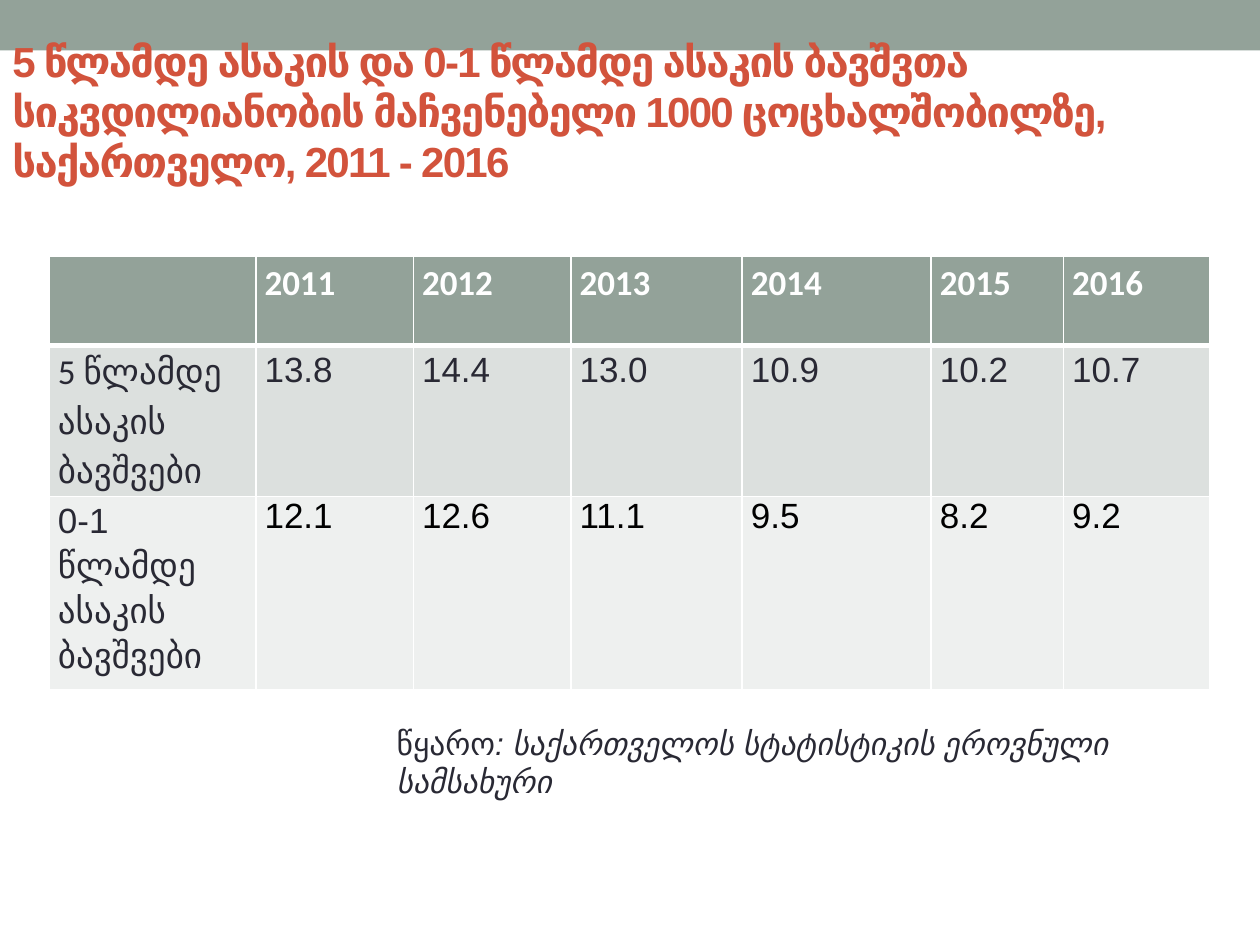
from lxml import etree
from pptx import Presentation
from pptx import util as u
from pptx.dml.color import RGBColor
from pptx.enum import shapes, text
from pptx.oxml.ns import qn

SAGE = RGBColor(0x93, 0xA2, 0x99)
BAND_DARK = RGBColor(0xDC, 0xE0, 0xDE)
BAND_LIGHT = RGBColor(0xEE, 0xF0, 0xEF)
RED = RGBColor(0xD2, 0x53, 0x3C)
INK = RGBColor(0x29, 0x29, 0x34)
BLACK = RGBColor(0, 0, 0)
WHITE = RGBColor(0xFF, 0xFF, 0xFF)

COLUMNS = [1.64, 1.25, 1.25, 1.36, 1.5, 1.05, 1.16]
ROWS = [0.71, 1.2, 1.43]  # tall enough for the wrapped labels
DATA = [
    ["", "2011", "2012", "2013", "2014", "2015", "2016"],
    ["5 წლამდე ასაკის ბავშვები", "13.8", "14.4", "13.0", "10.9", "10.2", "10.7"],
    ["0-1 წლამდე ასაკის ბავშვები", "12.1", "12.6", "11.1", "9.5", "8.2", "9.2"],
]


class Deck:
    """Holds the style and the current slide."""

    font = "Arial"
    table_font = "Calibri"

    def __init__(self, s):
        self.s = s

    def style(self, p, size, color, name=None, bold=False):
        f = p.font
        f.name, f.size, f.bold = name or self.font, u.Pt(size), bold
        f.color.rgb = color

    def bar(self, x, y, w, h, color):
        sp = self.s.shapes.add_shape(
            shapes.MSO_SHAPE.RECTANGLE, *map(u.Inches, (x, y, w, h)))
        sp.shadow.inherit = False
        sp.fill.solid()
        sp.fill.fore_color.rgb = color
        sp.line.fill.background()

    def text(self, x, y, w, h, runs, size, color, bold=False, spacing=None):
        """Each run is a (text, italic) pair."""
        sp = self.s.shapes.add_textbox(*map(u.Inches, (x, y, w, h)))
        tf = sp.text_frame
        tf.word_wrap = True
        tf.vertical_anchor = text.MSO_ANCHOR.TOP
        p = tf.paragraphs[0]
        self.style(p, size, color, bold=bold)
        for words, italic in runs:
            r = p.add_run()
            r.text = words
            if italic:
                r.font.italic = True
            if spacing is not None:
                r._r.get_or_add_rPr().set("spc", str(spacing * 100))

    def borders(self, cell, **widths):
        """Draw white borders; they must come before the cell's fill."""
        tc_pr = cell._tc.get_or_add_tcPr()
        for i, side in enumerate("LRTB"):
            ln = etree.Element(qn(f"a:ln{side}"), w=str(u.Pt(widths.get(side, 1))))
            fill = etree.SubElement(ln, qn("a:solidFill"))
            etree.SubElement(fill, qn("a:srgbClr"), val=str(WHITE))
            tc_pr.insert(i, ln)

    def cell(self, cell, words, row, col):
        header = row == 0
        cell.fill.solid()
        cell.fill.fore_color.rgb = (SAGE, BAND_DARK, BAND_LIGHT)[row]
        self.borders(cell, **({"B": 3}, {"T": 3}, {})[row])
        cell.margin_left = cell.margin_right = u.Inches(0.07)
        cell.margin_top = cell.margin_bottom = 0
        p = cell.text_frame.paragraphs[0]
        p.text = words
        last_values = row == 2 and col > 0
        if not last_values:
            p.line_spacing = 1.15
        color = WHITE if header else BLACK if last_values else INK
        calibri = header or (row, col) == (1, 0)
        self.style(p, 20, color, self.table_font if calibri else self.font, header)

    def table(self, x, y, columns, rows, data):
        tbl = self.s.shapes.add_table(
            len(rows), len(columns),
            *map(u.Inches, (x, y, sum(columns), sum(rows)))).table
        for column, width in zip(tbl.columns, columns):
            column.width = u.Inches(width)
        for i, (height, values) in enumerate(zip(rows, data)):
            tbl.rows[i].height = u.Inches(height)
            for j, words in enumerate(values):
                self.cell(tbl.cell(i, j), words, i, j)


def main():
    prs = Presentation()
    prs.slide_width, prs.slide_height = u.Inches(10), u.Inches(7.5)
    deck = Deck(prs.slides.add_slide(prs.slide_layouts[6]))

    # Top band and title
    deck.bar(0, 0, 10, 0.4, SAGE)
    title = ("5 წლამდე ასაკის და 0-1 წლამდე ასაკის ბავშვთა სიკვდილიანობის "
             "მაჩვენებელი 1000 ცოცხალშობილზე, საქართველო, 2011 - 2016")
    deck.text(0, 0.23, 9.5, 1.02, [(title, False)], 24, RED, bold=True, spacing=-1)

    # Mortality rates by year
    deck.table(0.39, 2.03, COLUMNS, ROWS, DATA)

    # Source note
    deck.text(3.05, 5.7, 5.86, 0.71,
              [("წყარო", False),
               (": საქართველოს სტატისტიკის ეროვნული სამსახური", True)], 18, INK)

    prs.save("out.pptx")


if __name__ == "__main__":
    main()
